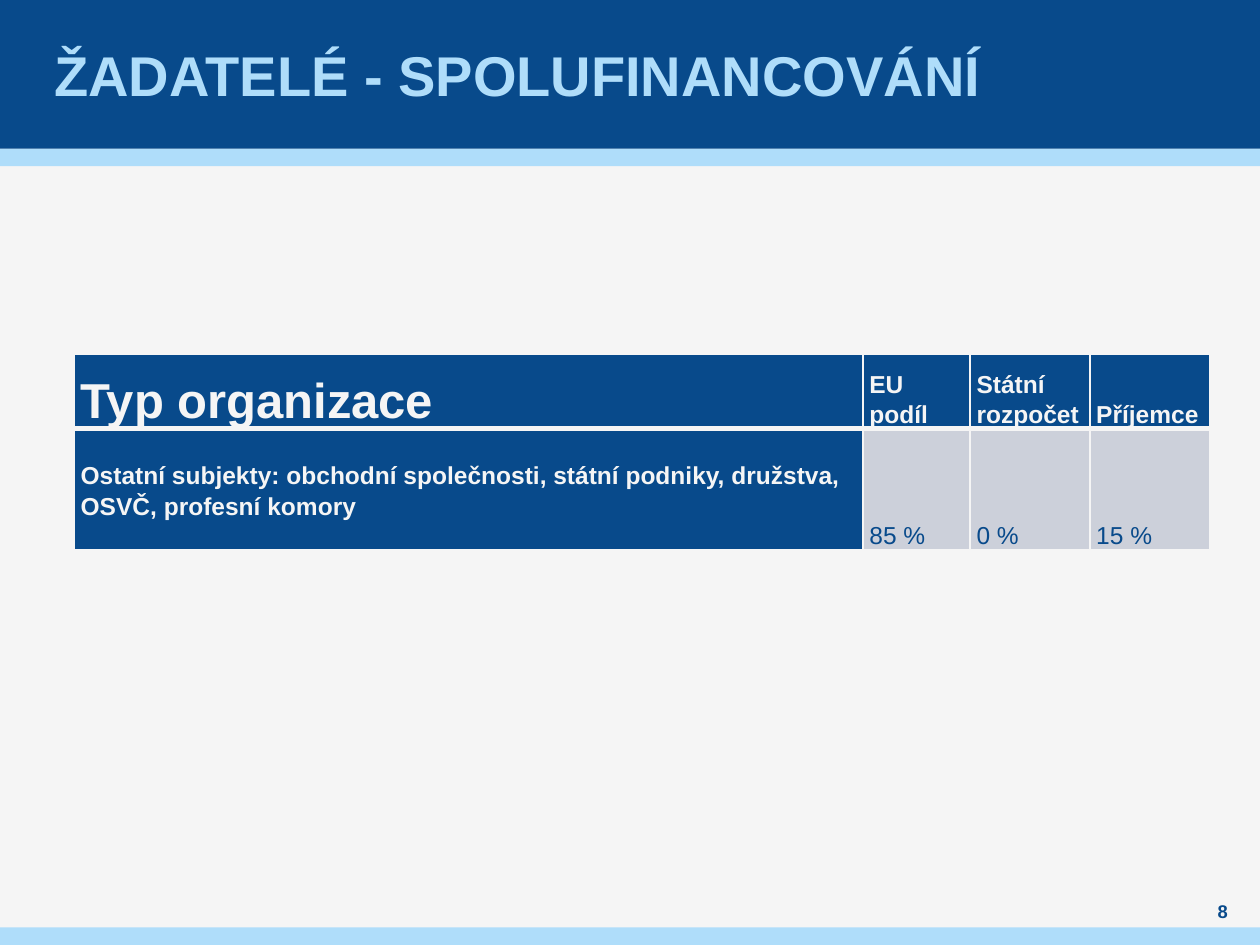
from typing import NamedTuple

from lxml import etree
from pptx import Presentation
from pptx import util as u
from pptx.dml.color import RGBColor
from pptx.enum import shapes, text
from pptx.oxml import ns

NAVY = RGBColor(0x08, 0x4A, 0x8B)
SKY = RGBColor(0xAF, 0xDD, 0xFA)
PAPER = RGBColor(0xF5, 0xF5, 0xF5)
GREY = RGBColor(0xCC, 0xD0, 0xDA)

ANCHOR = text.MSO_ANCHOR
SLIDE_WIDTH = 10
BAND_HEIGHT = 1.18
STRIPE_HEIGHT = 0.14


class Bar(NamedTuple):
    top: float
    height: float
    color: RGBColor


class Entry(NamedTuple):
    words: str
    size: float = 14
    color: RGBColor = PAPER
    bold: bool = True
    fill: RGBColor = NAVY
    anchor: ANCHOR = ANCHOR.BOTTOM
    spacing: float = 1.07


def write(frame, words: str, *, size: float, color: RGBColor, bold: bool = True,
          align=text.PP_ALIGN.LEFT, spacing: float = 1.0) -> None:
    frame.word_wrap = True
    paragraph = frame.paragraphs[0]
    paragraph.alignment = align
    paragraph.line_spacing = spacing
    run = paragraph.add_run()
    run.text = words
    run.font.name = "Arial"
    run.font.size = u.Pt(size)
    run.font.bold = bold
    run.font.color.rgb = color


def draw_bar(slide, bar: Bar) -> None:
    shape = slide.shapes.add_shape(
        shapes.MSO_SHAPE.RECTANGLE, 0, u.Inches(bar.top),
        u.Inches(SLIDE_WIDTH), u.Inches(bar.height))
    shape.shadow.inherit = False
    shape.fill.solid()
    shape.fill.fore_color.rgb = bar.color
    shape.line.fill.background()


def draw_label(slide, box: tuple, words: str, *, inset: float = 0, **style) -> None:
    label = slide.shapes.add_textbox(*map(u.Inches, box)).text_frame
    label.margin_left = label.margin_right = u.Inches(inset)
    label.margin_top = label.margin_bottom = 0
    label.vertical_anchor = ANCHOR.MIDDLE
    write(label, words, **style)


def set_borders(cell, widths: dict[str, float]) -> None:
    properties = cell._tc.get_or_add_tcPr()
    for side, points in widths.items():
        line = etree.SubElement(properties, ns.qn(f"a:ln{side}"), w=str(u.Pt(points)))
        fill = etree.SubElement(line, ns.qn("a:solidFill"))
        etree.SubElement(fill, ns.qn("a:srgbClr"), val=str(PAPER))


def fill_cell(cell, entry: Entry, borders: dict[str, float]) -> None:
    cell.margin_left = cell.margin_right = u.Inches(0.05)
    cell.margin_top, cell.margin_bottom = u.Inches(0.01), 0
    cell.vertical_anchor = entry.anchor
    set_borders(cell, borders)
    cell.fill.solid()
    cell.fill.fore_color.rgb = entry.fill
    write(cell.text_frame, entry.words, size=entry.size, color=entry.color,
          bold=entry.bold, spacing=entry.spacing)


def share(words: str) -> Entry:
    return Entry(words, color=NAVY, bold=False, fill=GREY)


BARS = [
    Bar(BAND_HEIGHT, STRIPE_HEIGHT, SKY),
    Bar(0, BAND_HEIGHT, NAVY),
    Bar(7.5 - STRIPE_HEIGHT, STRIPE_HEIGHT, SKY),
]
COLUMN_WIDTHS = [6.26, 0.85, 0.95, 0.95]
ROW_HEIGHTS = [0.59, 0.96]
FUNDING = [
    [Entry("Typ organizace", size=28), Entry("EU podíl"),
     Entry("Státní rozpočet"), Entry("Příjemce")],
    [Entry("Ostatní subjekty: obchodní společnosti, státní podniky, družstva, "
           "OSVČ, profesní komory", anchor=ANCHOR.MIDDLE, spacing=1.15),
     share("85 %"), share("0 %"), share("15 %")],
]


def draw_funding(slide) -> None:
    table = slide.shapes.add_table(
        len(ROW_HEIGHTS), len(COLUMN_WIDTHS), u.Inches(0.59), u.Inches(2.81),
        u.Inches(sum(COLUMN_WIDTHS)), u.Inches(sum(ROW_HEIGHTS))).table
    for column, width in zip(table.columns, COLUMN_WIDTHS):
        column.width = u.Inches(width)
    for row, height in zip(table.rows, ROW_HEIGHTS):
        row.height = u.Inches(height)

    # A thick rule separates the header from the body
    header_borders = {"L": 1, "R": 1, "T": 1, "B": 3}
    body_borders = {"L": 1, "R": 1, "T": 3, "B": 1}
    for row, entries, borders in zip(table.rows, FUNDING, (header_borders, body_borders)):
        for cell, entry in zip(row.cells, entries):
            fill_cell(cell, entry, borders)


def main() -> None:
    deck = Presentation()
    deck.slide_width, deck.slide_height = u.Inches(SLIDE_WIDTH), u.Inches(7.5)
    slide = deck.slides.add_slide(deck.slide_layouts[6])
    slide.background.fill.solid()
    slide.background.fill.fore_color.rgb = PAPER

    # Header and footer bands
    for bar in BARS:
        draw_bar(slide, bar)

    # Title and page number
    draw_label(slide, (0.39, 0, 9.21, BAND_HEIGHT), "ŽADATELÉ - SPOLUFINANCOVÁNÍ",
               inset=0.04, size=32, color=SKY)
    draw_label(slide, (9.45, 7.13, 0.51, 0.2), "8", size=10.5, color=NAVY,
               align=text.PP_ALIGN.CENTER)

    # Co-financing shares
    draw_funding(slide)
    deck.save("out.pptx")


if __name__ == "__main__":
    main()
